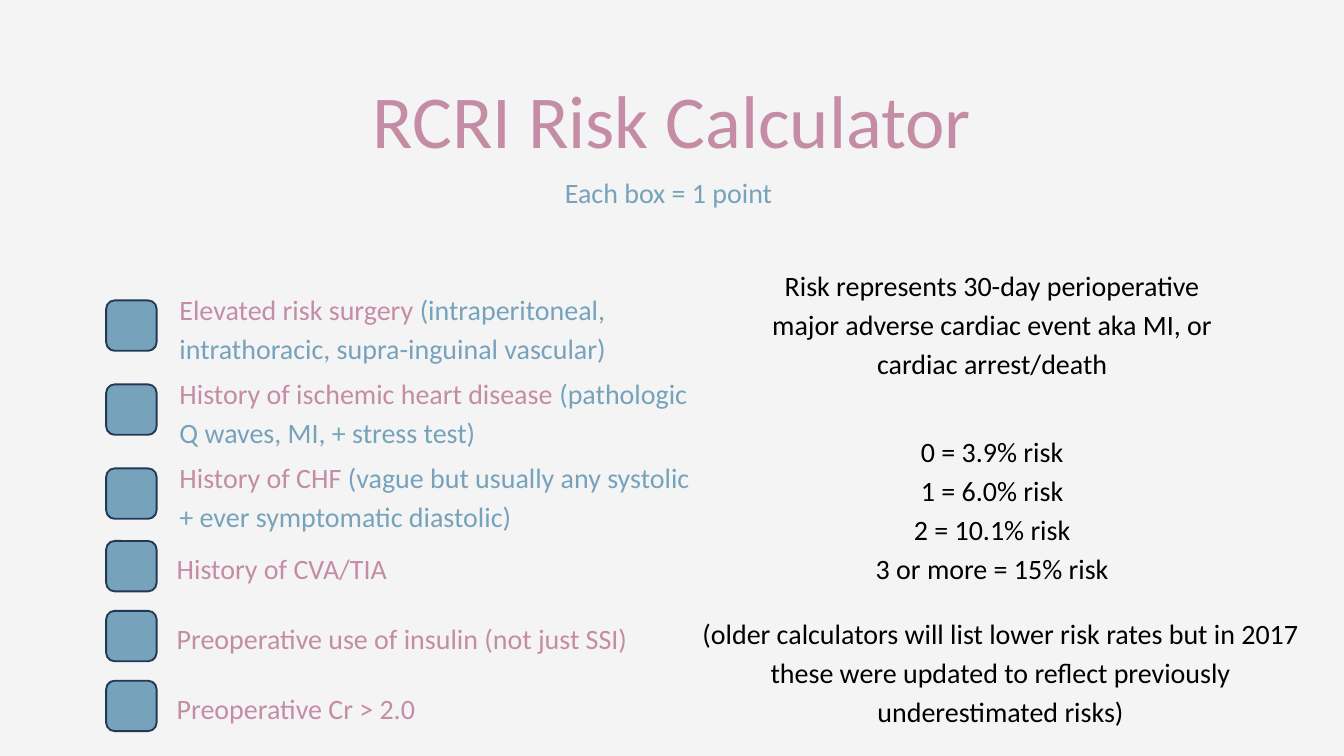
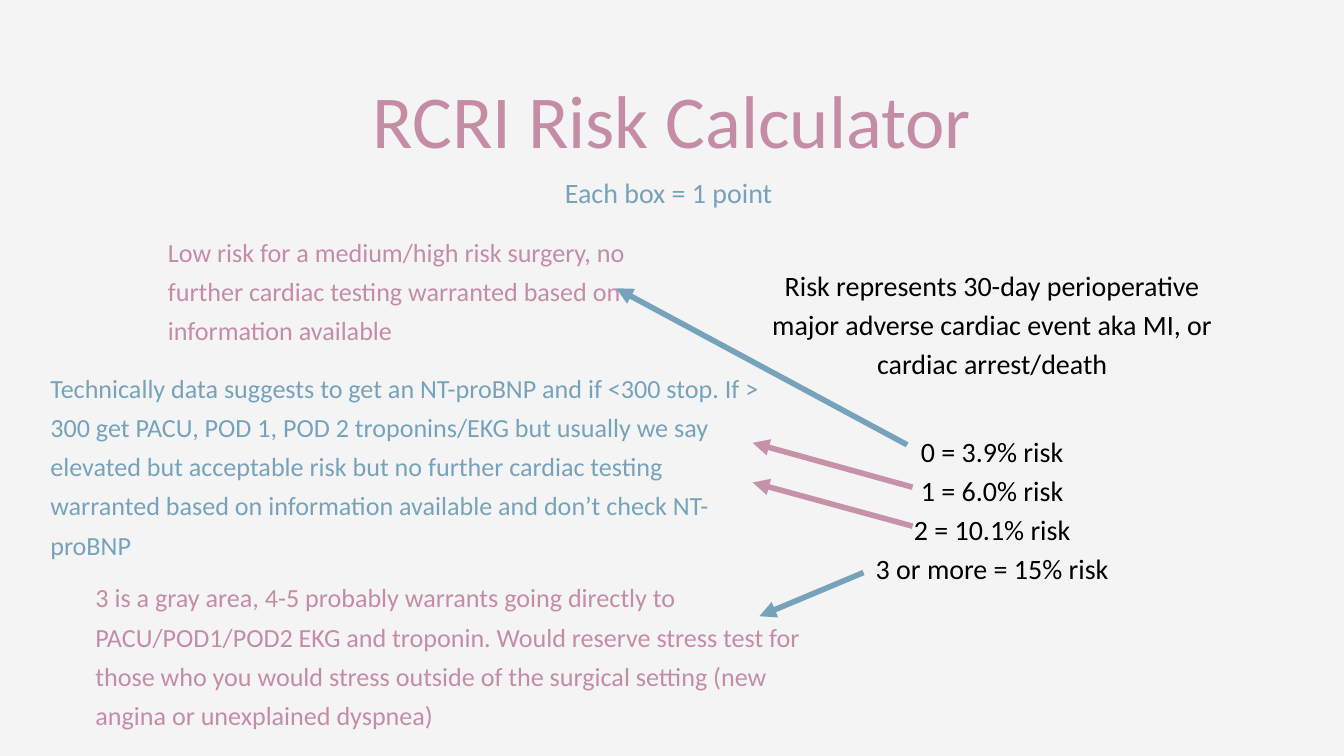
"""Build two slides that explain the RCRI risk calculator."""
from typing import NamedTuple

from lxml import etree
from pptx import Presentation
from pptx import shapes as base
from pptx import slide as s
from pptx import util as u
from pptx.dml import color as c
from pptx.enum import shapes, text
from pptx.oxml import ns

COLUMNS, ROWS = 20, 11.25
WIDTH, HEIGHT = u.Inches(20), u.Inches(11.25)
FONT = "Calibri"
COLORS = {
    "paper": "F4F4F4",
    "pink": "C48DA5",
    "arrow pink": "C692A9",
    "blue": "76A3BB",
    "navy": "233953",
    "black": "000000",
}
BOX_COLUMN, BOX_SIZE = 1.58, 0.75


class Span(NamedTuple):
    words: str
    color: str


class Area(NamedTuple):
    column: float
    row: float
    columns: float
    rows: float


class Block(NamedTuple):
    area: Area
    lines: list[list[Span]]
    size: int = 30
    spacing: int = 42
    centered: bool = False


class Arrow(NamedTuple):
    start: tuple[float, float]
    end: tuple[float, float]
    color: str


class Checklist(NamedTuple):
    first_row: float
    pitch: float
    text_column: float
    text_shift: float
    text_rows: float
    items: list[list[Span]]


HEADING = [
    Block(Area(3.54, 1.1, 12.92, 1.35), [[Span("RCRI Risk Calculator", "pink")]],
          size=80, spacing=96, centered=True),
    Block(Area(3.98, 2.53, 11.94, 0.55), [[Span("Each box = 1 point", "blue")]],
          centered=True),
]
RISKS = [
    Block(Area(11.2, 3.91, 7.13, 2.31), [[Span(
        "Risk represents 30-day perioperative major adverse cardiac event aka MI, "
        "or cardiac arrest/death", "black")]], centered=True),
    Block(Area(10.89, 6.38, 7.75, 4.08), [
        [Span(f"{points} = {rate}% risk", "black")]
        for points, rate in [("0", "3.9"), ("1", "6.0"), ("2", "10.1"),
                             ("3 or more", "15")]
    ], centered=True),
]
UPDATE_NOTE = Block(Area(10.43, 9.09, 8.92, 2.31), [[Span(
    "(older calculators will list lower risk rates but in 2017 these were updated "
    "to reflect previously underestimated risks)", "black")]], centered=True)
CHECKLISTS = [
    Checklist(4.47, 1.25, 2.67, -0.2, 1.13, [
        [Span("Elevated risk surgery ", "pink"),
         Span("(intraperitoneal, intrathoracic, supra-inguinal vascular)", "blue")],
        [Span("History of ischemic heart disease ", "pink"),
         Span("(pathologic Q waves, MI, + stress test)", "blue")],
        [Span("History of CHF ", "pink"),
         Span("(vague but usually any systolic + ever symptomatic diastolic)", "blue")],
    ]),
    Checklist(8.05, 1.04, 2.63, 0.08, 0.54, [
        [Span("History of CVA/TIA", "pink")],
        [Span("Preoperative use of insulin (not just SSI)", "pink")],
        [Span("Preoperative Cr > 2.0", "pink")],
    ]),
]
ADVICE = [
    Block(Area(2.5, 3.4, 7.13, 1.72), [[Span(
        "Low risk for a medium/high risk surgery, no further cardiac testing "
        "warranted based on information available", "pink")]], size=28),
    Block(Area(0.75, 5.42, 10.67, 2.89), [[Span(
        "Technically data suggests to get an NT-proBNP and if <300 stop. If > 300 get "
        "PACU, POD 1, POD 2 troponins/EKG but usually we say elevated but acceptable "
        "risk but no further cardiac testing warranted based on information available "
        "and don’t check NT-proBNP", "blue")]], size=28),
    Block(Area(1.42, 8.54, 10.92, 2.31), [[Span(
        "3 is a gray area, 4-5 probably warrants going directly to PACU/POD1/POD2 EKG "
        "and troponin. Would reserve stress test for those who you would stress "
        "outside of the surgical setting (new angina or unexplained dyspnea)",
        "pink")]], size=28),
]
ARROWS = [
    Arrow((13.5, 6.62), (9.17, 4.29), "blue"),
    Arrow((13.58, 7.25), (11.2, 6.59), "arrow pink"),
    Arrow((13.58, 7.83), (11.2, 7.18), "arrow pink"),
    Arrow((12.85, 8.52), (11.3, 9.17), "blue"),
]


def across(columns: float) -> int:
    return round(WIDTH * columns / COLUMNS)


def down(rows: float) -> int:
    return round(HEIGHT * rows / ROWS)


def place(area: Area) -> tuple[int, int, int, int]:
    return across(area.column), down(area.row), across(area.columns), down(area.rows)


def rgb(name: str) -> c.RGBColor:
    return c.RGBColor.from_string(COLORS[name])


def draw_block(tree: base.shapetree._BaseGroupShapes, block: Block) -> None:
    box = tree.add_textbox(*place(block.area))
    frame = box.text_frame
    frame.word_wrap = True
    frame.auto_size = text.MSO_AUTO_SIZE.SHAPE_TO_FIT_TEXT
    frame.margin_left = frame.margin_right = frame.margin_top = frame.margin_bottom = 0
    frame.text = "\n".join(line[0].words for line in block.lines)
    for para, line in zip(frame.paragraphs, block.lines):
        para.alignment = text.PP_ALIGN.CENTER if block.centered else text.PP_ALIGN.LEFT
        para.line_spacing = u.Pt(block.spacing)
        for extra in line[1:]:
            para.add_run().text = extra.words
        for run, span in zip(para.runs, line):
            run.font.name = FONT
            run.font.size = u.Pt(block.size)
            run.font.color.rgb = rgb(span.color)


def draw_checkbox(page: s.Slide, row: float) -> None:
    area = Area(BOX_COLUMN, row, BOX_SIZE, BOX_SIZE)
    box = page.shapes.add_shape(shapes.MSO_SHAPE.ROUNDED_RECTANGLE, *place(area))
    box.shadow.inherit = False
    box.fill.solid()
    box.fill.fore_color.rgb = rgb("blue")
    box.line.color.rgb = rgb("navy")
    box.line.width = u.Pt(2)


def draw_checklist(page: s.Slide, checklist: Checklist) -> None:
    for index, item in enumerate(checklist.items):
        row = checklist.first_row + index * checklist.pitch
        draw_checkbox(page, row)
        area = Area(checklist.text_column, row + checklist.text_shift, 7.75,
                    checklist.text_rows)
        draw_block(page.shapes, Block(area, [item]))


def draw_arrow(page: s.Slide, arrow: Arrow) -> None:
    (left, top), (right, bottom) = arrow.start, arrow.end
    connector = page.shapes.add_connector(
        shapes.MSO_CONNECTOR.STRAIGHT, across(left), down(top), across(right), down(bottom))
    connector.line.color.rgb = rgb(arrow.color)
    connector.line.width = u.Pt(6)
    properties = connector.element.spPr
    outline = properties.find(ns.qn("a:ln"))
    etree.SubElement(outline, ns.qn("a:tailEnd"), type="triangle")
    etree.SubElement(properties, ns.qn("a:effectLst"))


def add_page(deck) -> s.Slide:
    page = deck.slides.add_slide(deck.slide_layouts[6])
    page.background.fill.solid()
    page.background.fill.fore_color.rgb = rgb("paper")
    heading = page.shapes.add_group_shape()
    for block in HEADING:
        draw_block(heading.shapes, block)
    for block in RISKS:
        draw_block(page.shapes, block)
    return page


def main() -> None:
    deck = Presentation()
    deck.slide_width, deck.slide_height = WIDTH, HEIGHT

    scoring = add_page(deck)
    for checklist in CHECKLISTS:
        draw_checklist(scoring, checklist)
    draw_block(scoring.shapes, UPDATE_NOTE)

    guidance = add_page(deck)
    for block in ADVICE:
        draw_block(guidance.shapes, block)
    for arrow in ARROWS:
        draw_arrow(guidance, arrow)

    deck.save("out.pptx")


if __name__ == "__main__":
    main()
